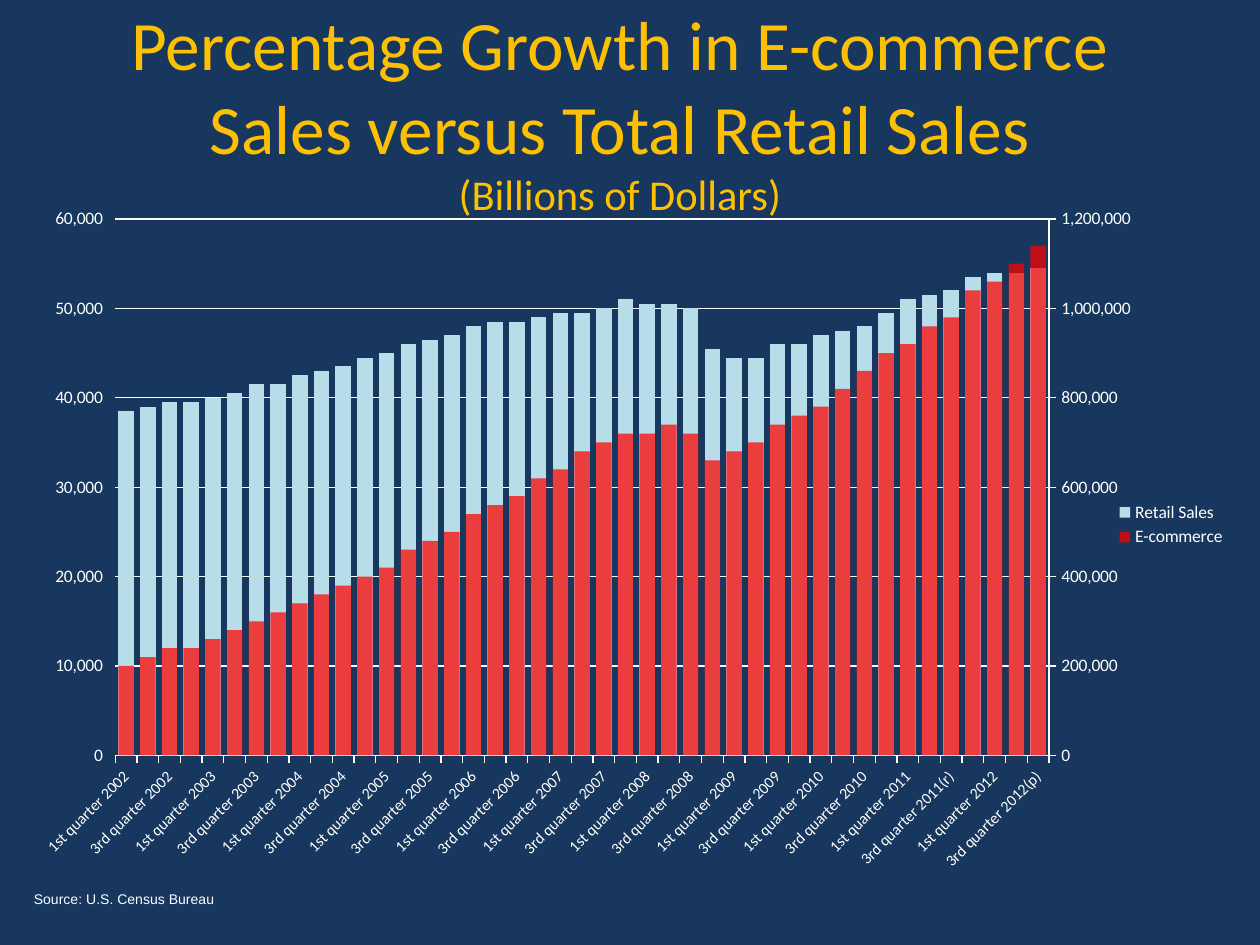
from copy import deepcopy
from dataclasses import dataclass

from lxml import etree
from pptx import Presentation
from pptx.chart.data import CategoryChartData
from pptx.dml.color import RGBColor
from pptx.enum.chart import (XL_AXIS_CROSSES, XL_CHART_TYPE, XL_LEGEND_POSITION,
                             XL_TICK_LABEL_POSITION, XL_TICK_MARK)
from pptx.enum.text import MSO_ANCHOR, PP_ALIGN
from pptx.oxml.ns import qn
from pptx.util import Inches, Pt

CENTER, LEFT = PP_ALIGN.CENTER, PP_ALIGN.LEFT
MIDDLE, TOP = MSO_ANCHOR.MIDDLE, MSO_ANCHOR.TOP
COLUMN = XL_CHART_TYPE.COLUMN_CLUSTERED
OUT, NONE = XL_TICK_MARK.OUTSIDE, XL_TICK_MARK.NONE
FAR_END = XL_AXIS_CROSSES.MAXIMUM
LOW, HIGH = XL_TICK_LABEL_POSITION.LOW, XL_TICK_LABEL_POSITION.HIGH
RIGHT = XL_LEGEND_POSITION.RIGHT


@dataclass(frozen=True)
class Theme:
    back: str = "17375E"
    gold: str = "FFC000"
    white: str = "FFFFFF"
    retail: str = "B7DEE8"
    online: str = "FF0000"
    body: str = "Calibri"
    note: str = "Arial"
    title: float = 39.6
    sub: float = 24.3
    label: float = 10
    tick: float = 9
    source: float = 8


THEME = Theme()

# Newest quarter first; retail in ten thousands, e-commerce in thousands
RETAIL = [109, 108, 108, 107, 104, 103, 102, 99, 96, 95, 94, 92, 92, 89, 89,
          91, 100, 101, 101, 102, 100, 99, 99, 98, 97, 97, 96, 94, 93, 92, 90,
          89, 87, 86, 85, 83, 83, 81, 80, 79, 79, 78, 77]
ONLINE = [57, 55, 53, 52, 49, 48, 46, 45, 43, 41, 39, 38, 37, 35, 34, 33, 36,
          37, 36, 36, 35, 34, 32, 31, 29, 28, 27, 25, 24, 23, 21, 20, 19, 18,
          17, 16, 15, 14, 13, 12, 12, 11, 10]
MARKS = {(2012, 3): "(p)", (2012, 2): "(r)", (2011, 3): "(r)"}


def rgb(code):
    return RGBColor.from_string(code)


def quarters():
    names = {1: "1st", 2: "2nd", 3: "3rd", 4: "4th"}
    return [f"{names[q]} quarter {year}{MARKS.get((year, q), '')}"
            for year in range(2012, 2001, -1) for q in (4, 3, 2, 1)
            if (year, q) != (2012, 4)]


def add_text(slide, box, runs, font, color, align=LEFT, anchor=TOP):
    """Place one paragraph of (text, size) runs, each on its own line."""
    frame = slide.shapes.add_textbox(*map(Inches, box)).text_frame
    frame.word_wrap = True
    frame.vertical_anchor = anchor
    para = frame.paragraphs[0]
    para.alignment = align
    for i, (text, size) in enumerate(runs):
        if i:
            para.add_line_break()
        run = para.add_run()
        run.text = text
        run.font.name, run.font.size = font, Pt(size)
        run.font.color.rgb = rgb(color)


def sub(parent, tag, val):
    node = etree.SubElement(parent, qn(tag))
    node.set("val", str(val))
    return node


def set_line(line):
    line.color.rgb = rgb(THEME.white)
    line.width = Pt(0.75)


def set_plot(area, x, y, w, h):
    """Fix the inner plot area as fractions of the chart."""
    for old in area.findall(qn("c:layout")):
        area.remove(old)
    layout = etree.Element(qn("c:layout"))
    manual = etree.SubElement(layout, qn("c:manualLayout"))
    sub(manual, "c:layoutTarget", "inner")
    for tag in ("xMode", "yMode"):
        sub(manual, f"c:{tag}", "edge")
    for tag, val in zip("xywh", (x, y, w, h)):
        sub(manual, f"c:{tag}", val)
    area.insert(0, layout)


def split_axes(chart, area, top, step):
    """Move the second series to its own value axis on the right."""
    bars = area.find(qn("c:barChart"))
    cat, val = area.find(qn("c:catAx")), area.find(qn("c:valAx"))
    bars2, cat2, val2 = map(deepcopy, (bars, cat, val))
    bars.remove(bars.findall(qn("c:ser"))[1])
    bars2.remove(bars2.find(qn("c:ser")))
    bars.addnext(bars2)
    val.addnext(val2)
    val2.addnext(cat2)

    ids = {"cat": "50010", "val": "50020"}
    for node, key in zip(bars2.findall(qn("c:axId")), ("cat", "val")):
        node.set("val", ids[key])
    for axis, own, other in ((cat2, "cat", "val"), (val2, "val", "cat")):
        axis.find(qn("c:axId")).set("val", ids[own])
        axis.find(qn("c:crossAx")).set("val", ids[other])
    cat2.find(qn("c:delete")).set("val", "1")
    val2.remove(val2.find(qn("c:majorGridlines")))
    val2.find(qn("c:axPos")).set("val", "r")
    val2.find(qn("c:crosses")).set("val", "autoZero")
    val2.find(qn("c:majorUnit")).set("val", str(step))
    val2.find(qn("c:scaling")).find(qn("c:max")).set("val", str(top))

    # Left axis: labels at the far end of the reversed quarters, no line
    chart.category_axis.crosses = FAR_END
    chart.value_axis.tick_label_position = HIGH
    chart.value_axis.format.line.fill.background()


def add_sales(slide, box):
    data = CategoryChartData(number_format="#,##0")
    data.categories = quarters()
    data.add_series("Retail Sales", [v * 10000 for v in RETAIL])
    data.add_series("E-commerce", [v * 1000 for v in ONLINE])
    chart = slide.shapes.add_chart(COLUMN, *map(Inches, box), data).chart
    chart.has_title = False
    chart.font.name, chart.font.size = THEME.body, Pt(THEME.label)
    chart.font.color.rgb = rgb(THEME.white)

    # Columns
    plot = chart.plots[0]
    plot.gap_width, plot.vary_by_categories = 40, False
    for series, color in zip(plot.series, (THEME.retail, THEME.online)):
        series.format.fill.solid()
        series.format.fill.fore_color.rgb = rgb(color)
        series.invert_if_negative = False
    tint = plot.series[1].format.fill._xPr.find(".//" + qn("a:srgbClr"))
    sub(tint, "a:alpha", 73000)

    # Axes
    cat, val = chart.category_axis, chart.value_axis
    cat.reverse_order = True
    cat.tick_labels.font.size = Pt(THEME.tick)
    cat.tick_labels.font.name = THEME.body
    cat.tick_labels.font.color.rgb = rgb(THEME.white)
    cat._element.find(qn("c:txPr")).find(qn("a:bodyPr")).set("rot", "-2700000")
    cat.tick_label_position = LOW
    val.minimum_scale, val.maximum_scale, val.major_unit = 0, 1200000, 200000
    val.tick_labels.number_format = "#,##0"
    val.tick_labels.number_format_is_linked = False
    val.has_major_gridlines = True
    set_line(val.major_gridlines.format.line)
    for axis in (cat, val):
        axis.major_tick_mark, axis.minor_tick_mark = OUT, NONE
        set_line(axis.format.line)

    # Legend
    chart.has_legend = True
    chart.legend.position = RIGHT
    chart.legend.include_in_layout = False

    area = chart._chartSpace.find(".//" + qn("c:plotArea"))
    split_axes(chart, area, 60000, 10000)
    set_plot(area, 0.093, 0.072, 0.754, 0.751)


def main():
    deck = Presentation()
    deck.slide_width, deck.slide_height = Inches(10), Inches(7.5)
    slide = deck.slides.add_slide(deck.slide_layouts[6])
    slide.background.fill.solid()
    slide.background.fill.fore_color.rgb = rgb(THEME.back)

    heading = "Percentage Growth in E-commerce Sales versus Total Retail Sales"
    add_text(slide, (0.42, 0.25, 9, 1.25),
             [(heading, THEME.title), ("(Billions of Dollars)", THEME.sub)],
             THEME.body, THEME.gold, align=CENTER, anchor=MIDDLE)
    add_sales(slide, (0, 1.33, 9.83, 5.67))
    add_text(slide, (0.17, 7.02, 3.75, 0.24),
             [("Source: U.S. Census Bureau", THEME.source)],
             THEME.note, THEME.white)
    deck.save("out.pptx")


if __name__ == "__main__":
    main()
